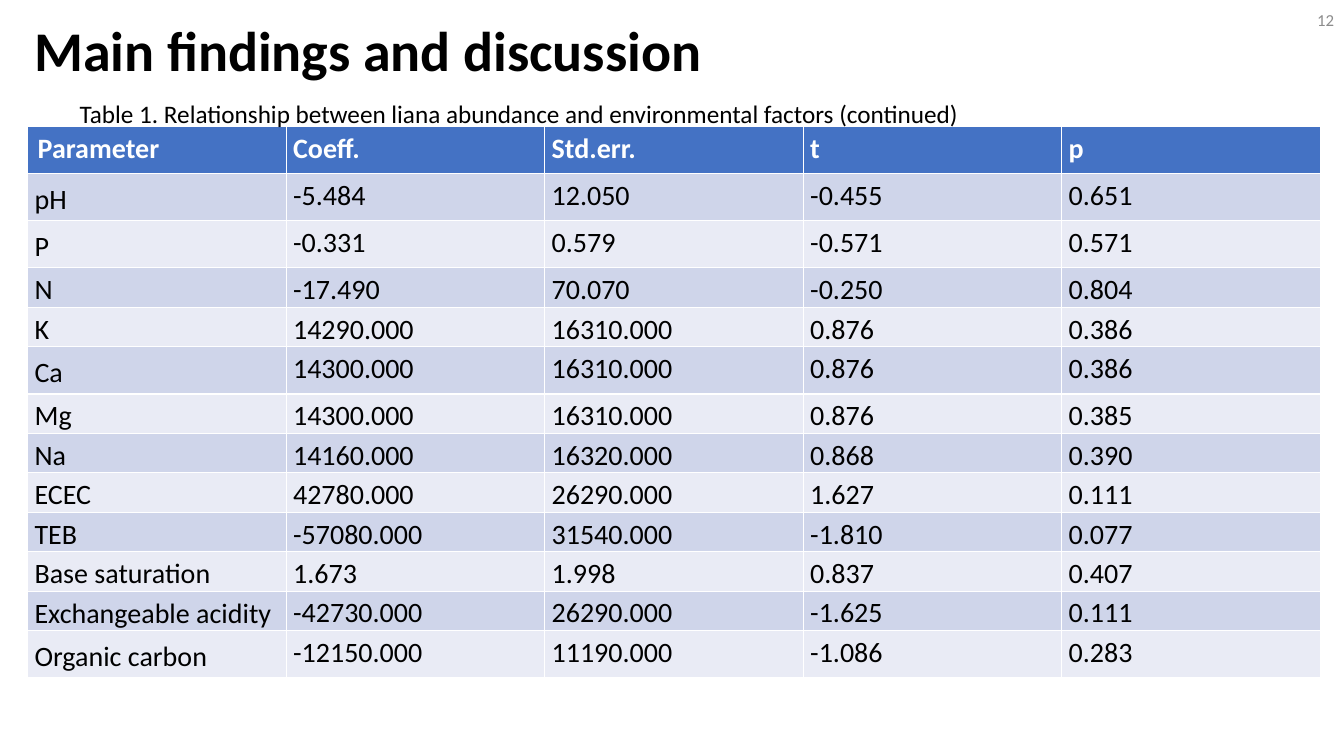
from pptx import Presentation
from pptx.dml.color import RGBColor
from pptx.enum.text import MSO_ANCHOR, MSO_AUTO_SIZE, PP_ALIGN
from pptx.util import Pt

TOP, MIDDLE = MSO_ANCHOR.TOP, MSO_ANCHOR.MIDDLE
LEFT, RIGHT = PP_ALIGN.LEFT, PP_ALIGN.RIGHT
NO_FIT = MSO_AUTO_SIZE.NONE

COLORS = {"black": "000000", "white": "FFFFFF", "gray": "8C8C8C",
          "header": "4472C4", "odd": "CFD5EA", "even": "E9EBF5"}
TITLE_ONLY = 5
TALL_ROW, SHORT_ROW = 33.7, 28.1
TALL_PARAMETERS = {"Parameter", "pH", "P", "Ca", "Organic carbon"}

FINDINGS = [
    ("Parameter", "Coeff.", "Std.err.", "t", "p"),
    ("pH", "-5.484", "12.050", "-0.455", "0.651"),
    ("P", "-0.331", "0.579", "-0.571", "0.571"),
    ("N", "-17.490", "70.070", "-0.250", "0.804"),
    ("K", "14290.000", "16310.000", "0.876", "0.386"),
    ("Ca", "14300.000", "16310.000", "0.876", "0.386"),
    ("Mg", "14300.000", "16310.000", "0.876", "0.385"),
    ("Na", "14160.000", "16320.000", "0.868", "0.390"),
    ("ECEC", "42780.000", "26290.000", "1.627", "0.111"),
    ("TEB", "-57080.000", "31540.000", "-1.810", "0.077"),
    ("Base saturation", "1.673", "1.998", "0.837", "0.407"),
    ("Exchangeable acidity", "-42730.000", "26290.000", "-1.625", "0.111"),
    ("Organic carbon", "-12150.000", "11190.000", "-1.086", "0.283"),
]


def apply(target, values):
    for name, value in values.items():
        setattr(target, name, value)


class PageBuilder:
    def __init__(self, page, font_name):
        self.page = page
        self.font_name = font_name

    def fill_text(self, frame, text, size, color, bold=False, **para_format):
        para = frame.paragraphs[0]
        apply(para, para_format)
        span = para.add_run()
        span.text = text
        apply(span.font, {"name": self.font_name, "size": Pt(size), "bold": bold})
        span.font.color.rgb = RGBColor.from_string(COLORS[color])

    def place(self, box, left, top, width, height):
        apply(box, {"left": Pt(left), "top": Pt(top),
                    "width": Pt(width), "height": Pt(height)})

    def title(self, text, area, size):
        box = self.page.shapes.title
        self.place(box, *area)
        apply(box.text_frame, {"vertical_anchor": MIDDLE, "word_wrap": True,
                               "auto_size": NO_FIT})
        self.fill_text(box.text_frame, text, size, "black", True,
                       alignment=LEFT, line_spacing=0.9)

    def text(self, text, area, size, color, wrap, anchor=TOP, align=LEFT):
        box = self.page.shapes.add_textbox(*map(Pt, area))
        apply(box.text_frame, {"word_wrap": wrap, "vertical_anchor": anchor})
        self.fill_text(box.text_frame, text, size, color, alignment=align)

    def table(self, rows, area, size):
        table = self.page.shapes.add_table(len(rows), len(rows[0]), *map(Pt, area)).table
        for row_index, values in enumerate(rows):
            is_tall = values[0] in TALL_PARAMETERS
            table.rows[row_index].height = Pt(TALL_ROW if is_tall else SHORT_ROW)
            for column_index, value in enumerate(values):
                self.cell(table.cell(row_index, column_index), value,
                          row_index, column_index, size)

    def cell(self, cell, value, row_index, column_index, size):
        is_header, is_label = row_index == 0, column_index == 0
        fill = "header" if is_header else ("even", "odd")[row_index % 2]
        cell.fill.solid()
        cell.fill.fore_color.rgb = RGBColor.from_string(COLORS[fill])
        cell.vertical_anchor = MIDDLE if is_label and not is_header else TOP
        para_format = {}
        # The corner cell keeps the default margins and spacing
        if not (is_header and is_label):
            apply(cell, {"margin_left": Pt(5), "margin_right": Pt(5),
                         "margin_top": 0, "margin_bottom": 0})
            para_format = {"line_spacing": 1.15, "space_after": Pt(10)}
        self.fill_text(cell.text_frame, value, size,
                       "white" if is_header else "black", is_header, **para_format)


def main():
    deck = Presentation()
    apply(deck, {"slide_width": Pt(960), "slide_height": Pt(540)})
    page = deck.slides.add_slide(deck.slide_layouts[TITLE_ONLY])
    builder = PageBuilder(page, "Calibri")

    # Heading
    builder.title("Main findings and discussion", (17.3, -14.4, 941.7, 104.4), 40)

    # Regression results
    builder.table(FINDINGS, (19.7, 90.3, 923.5, 378), 20)

    # Page number and table caption
    builder.text("12", (744, 0, 216, 28.8), 12, "gray", True, MIDDLE, RIGHT)
    builder.text("Table 1. Relationship between liana abundance and environmental "
                 "factors (continued)", (49.8, 67, 644.4, 29), 18, "black", False)

    deck.save("out.pptx")


if __name__ == "__main__":
    main()
